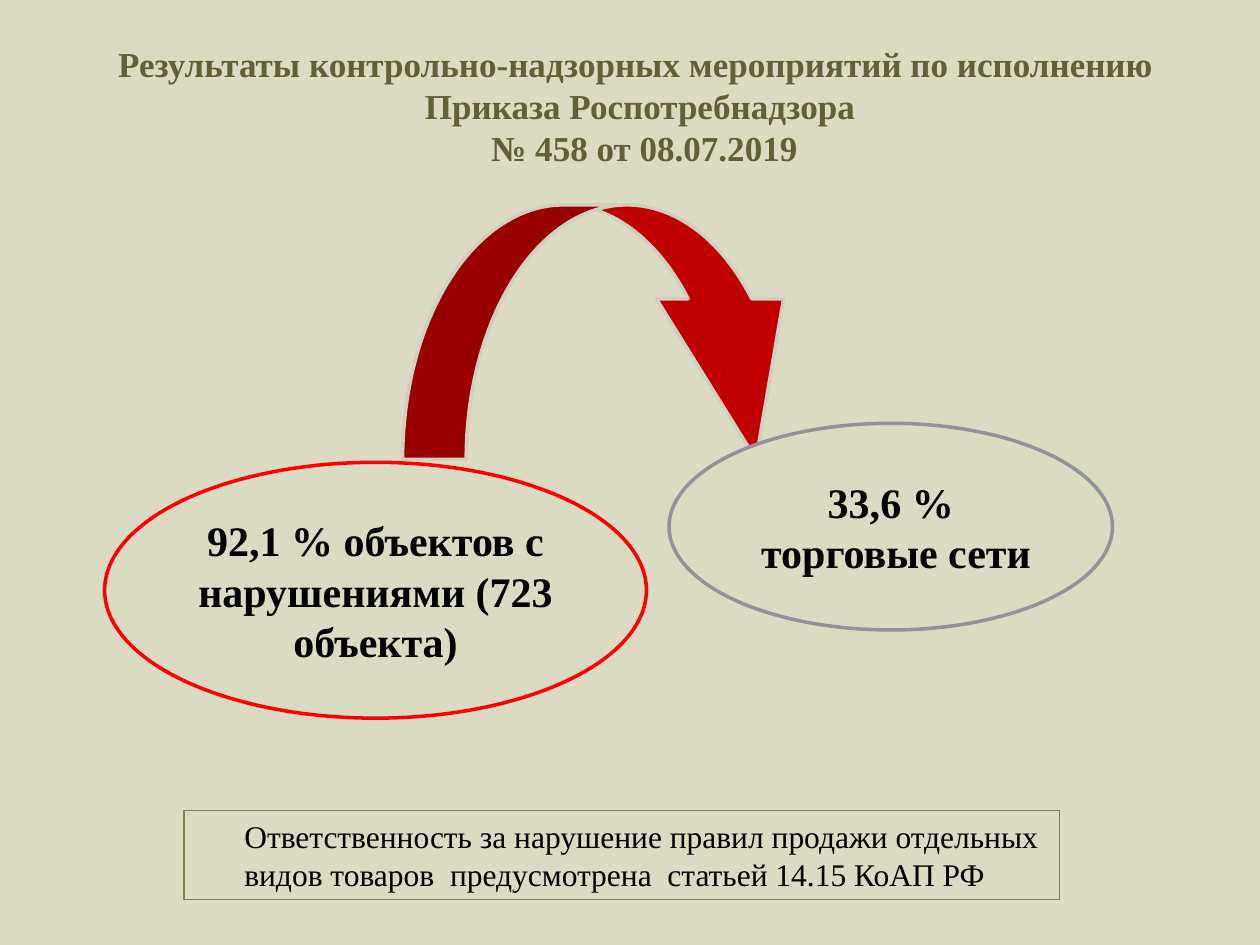
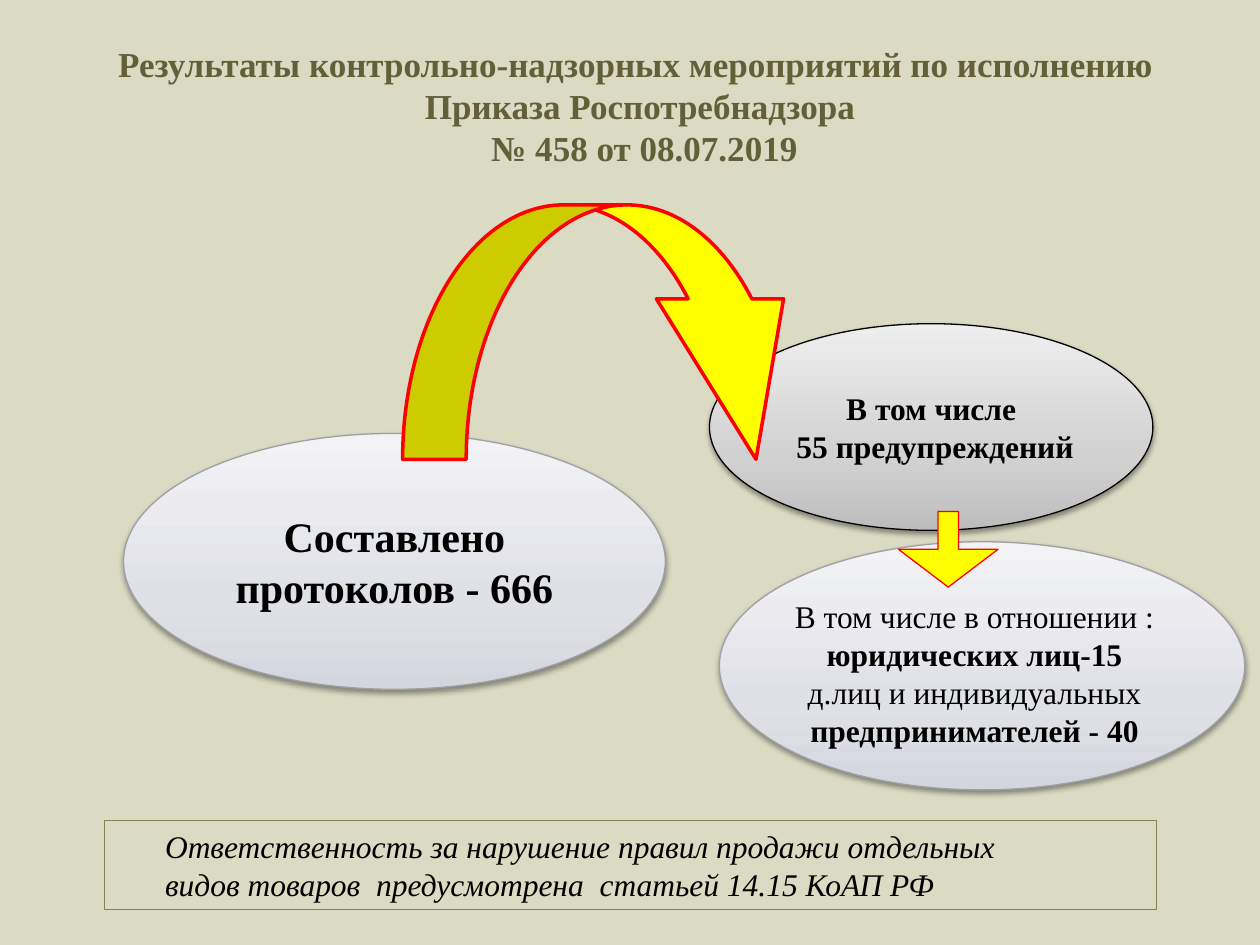
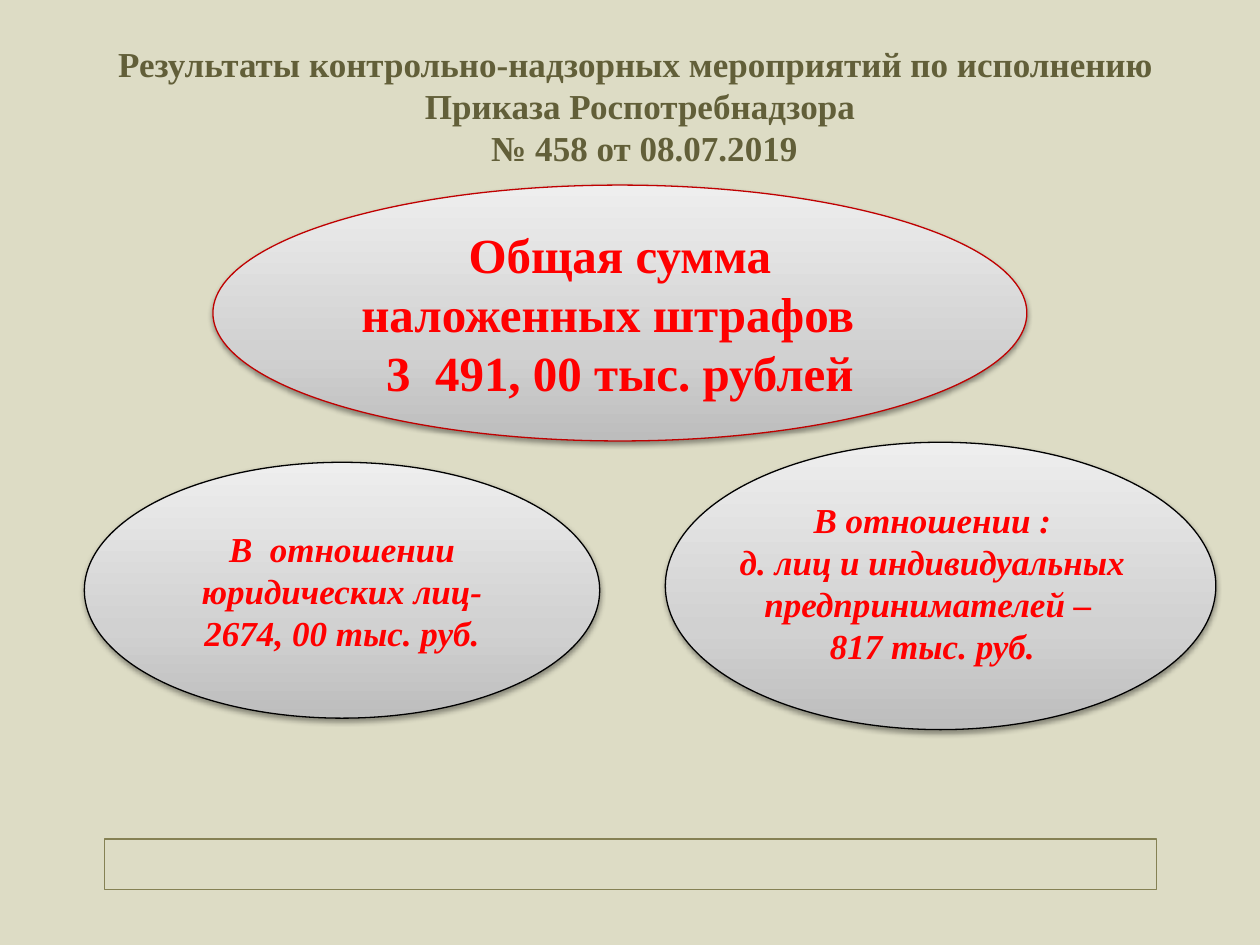
from copy import deepcopy

from pptx import Presentation
from pptx.dml.color import RGBColor
from pptx.enum.shapes import MSO_SHAPE
from pptx.enum.text import MSO_ANCHOR, MSO_AUTO_SIZE, PP_ALIGN
from pptx.oxml import parse_xml
from pptx.oxml.ns import nsdecls, qn
from pptx.util import Pt

# Colours and font
SAND = RGBColor(0xDB, 0xDA, 0xC2)
LIGHT_SAND = RGBColor(0xDD, 0xDC, 0xC5)
OLIVE = RGBColor(0x62, 0x5F, 0x39)
NOTE_LINE = RGBColor(0x85, 0x81, 0x54)
RED = RGBColor(0xFF, 0x00, 0x00)
DARK_RED = RGBColor(0xC0, 0x00, 0x00)
YELLOW = RGBColor(0xFF, 0xFF, 0x00)
BLACK = RGBColor(0x00, 0x00, 0x00)
PALE_LINE = RGBColor(0xD2, 0xCF, 0xBE)
GREY_LINE = RGBColor(0x92, 0x94, 0x9B)
SILVER_LINE = RGBColor(0x9E, 0xA0, 0xA8)
SILVER = [(0, RGBColor(0xD4, 0xD6, 0xDE)), (35, RGBColor(0xE0, 0xE1, 0xE7)),
          (100, RGBColor(0xF3, 0xF3, 0xF6))]
GREY = [(0, RGBColor(0xBD, 0xBD, 0xBD)), (35, RGBColor(0xD1, 0xD1, 0xD1)),
        (100, RGBColor(0xEE, 0xEE, 0xEE))]
FONT = "Times New Roman"

# Shared content and places: left, top, width, height in points
TITLE = ["Результаты контрольно-надзорных мероприятий по исполнению \n"
         "Приказа Роспотребнадзора\n № 458 от 08.07.2019"]
TITLE_BOX = (54, 20.9, 623.5, 79.9)
LIABILITY = ["Ответственность за нарушение правил продажи отдельных",
             "видов товаров  предусмотрена  статьей 14.15 КоАП РФ "]
ARC_BOX = (276.5, 70.6, 145.4, 238.3)

# Slide content: kind, box, format; listed from back to front
SLIDES = [
    (SAND, [
        ("ellipse", (59.8, 264.2, 309.6, 146.2),
         dict(fill=SAND, line=RED, weight=2, size=24, bold=True,
              text=["92,1 % объектов с нарушениями (723 объекта)"])),
        ("arc", ARC_BOX, dict(fill=DARK_RED, line=PALE_LINE, weight=2)),
        ("ellipse", (382.3, 241.9, 253.4, 118.1),
         dict(fill=SAND, line=GREY_LINE, weight=2, size=24, bold=True,
              text=["33,6 %", " торговые сети"])),
        ("note", (105.1, 463, 500.4, 51.1), dict(text=LIABILITY)),
    ]),
    (SAND, [
        ("ellipse", (70.6, 247.7, 309.6, 146.2),
         dict(fill=SILVER, line=SILVER_LINE, size=24, bold=True,
              text=["Составлено протоколов - 666"])),
        ("ellipse", (405.4, 185, 253.4, 118.1),
         dict(fill=GREY, line=BLACK, bold=True,
              text=["В том числе", " 55 предупреждений"])),
        ("note", (59.8, 468.7, 601.2, 51.1), dict(text=LIABILITY, italic=True)),
        ("ellipse", (411.1, 309.6, 300.2, 141.8), dict(fill=SILVER, line=SILVER_LINE)),
        ("label", (393.8, 337.7, 326.2, 94.3),
         dict(text=["В том числе в отношении :",
                    [("юридических лиц-15", True)],
                    [("д.лиц и индивидуальных ", False),
                     ("предпринимателей - 40", True)]])),
        ("down", (513.4, 292.3, 56.9, 43.2), dict(fill=YELLOW, line=RED)),
        ("arc", ARC_BOX, dict(fill=YELLOW, line=RED, weight=2)),
    ]),
    (LIGHT_SAND, [
        ("ellipse", (121.7, 105.8, 465.1, 146.2),
         dict(fill=GREY, line=DARK_RED, size=28, color=RED, bold=True,
              text=["Общая сумма наложенных штрафов   3  491, 00 тыс. рублей"])),
        ("ellipse", (48.2, 264.2, 294.5, 146.2),
         dict(fill=GREY, line=BLACK, size=20, color=RED, bold=True, italic=True,
              text=["В  отношении юридических лиц- 2674, 00 тыс. руб."])),
        ("note", (59.8, 479.5, 601.2, 28.8), {}),
        ("ellipse", (380.2, 252.7, 314.6, 164.2), dict(fill=GREY, line=BLACK)),
        ("label", (399.6, 281.5, 266.4, 104.4),
         dict(size=20, color=RED, bold=True, italic=True,
              text=["В отношении :",
                    "д. лиц и индивидуальных предпринимателей – ",
                    "817 тыс. руб."])),
    ]),
]

# Preset, rotation and adjustments of each drawn kind
PRESETS = {
    "ellipse": (MSO_SHAPE.OVAL, 0, ()),
    "note": (MSO_SHAPE.RECTANGLE, 0, ()),
    "arc": (MSO_SHAPE.CURVED_LEFT_ARROW, 270, (0.25, 0.5, 0.631)),
    "down": (MSO_SHAPE.DOWN_ARROW, 0, (0.206, 0.5)),
}


def write_text(shape, text, size=18, color=BLACK, bold=False, italic=False,
               align=PP_ALIGN.CENTER, anchor=MSO_ANCHOR.MIDDLE, indent=0):
    """Each paragraph is a string or a list of (text, bold) runs."""
    frame = shape.text_frame
    frame.word_wrap = True
    frame.auto_size = MSO_AUTO_SIZE.NONE
    frame.vertical_anchor = anchor
    for index, content in enumerate(text):
        paragraph = frame.add_paragraph() if index else frame.paragraphs[0]
        paragraph.alignment = align
        if indent:
            paragraph._p.get_or_add_pPr().set("indent", str(Pt(indent)))
        pieces = [(content, bold)] if isinstance(content, str) else content
        for piece, piece_bold in pieces:
            for row, line in enumerate(piece.split("\n")):
                if row:
                    paragraph.add_line_break()
                run = paragraph.add_run()
                run.text = line
                font = run.font
                font.name, font.size = FONT, Pt(size)
                font.bold, font.italic = piece_bold, italic
                font.color.rgb = color
        for line_break in paragraph._p.findall(qn("a:br")):
            line_break.append(deepcopy(run._r.rPr))


def fill_gradient(shape, stops):
    """Upward gradient with a soft shadow below the shape."""
    stop_xml = "".join(f'<a:gs pos="{position * 1000}"><a:srgbClr val="{color}"/></a:gs>'
                       for position, color in stops)
    properties = shape._element.spPr
    properties.find(qn("a:prstGeom")).addnext(parse_xml(
        f'<a:gradFill {nsdecls("a")} rotWithShape="1"><a:gsLst>{stop_xml}</a:gsLst>'
        '<a:lin ang="16200000" scaled="0"/></a:gradFill>'))
    properties.find(qn("a:effectLst")).append(parse_xml(
        f'<a:outerShdw {nsdecls("a")} blurRad="{Pt(3.1)}" dist="{Pt(1.6)}" dir="5400000" '
        'rotWithShape="0"><a:srgbClr val="000000"><a:alpha val="38000"/></a:srgbClr>'
        '</a:outerShdw>'))


def add_preset(slide, kind, box, fill=None, line=NOTE_LINE, weight=0.75):
    preset, rotation, adjustments = PRESETS[kind]
    shape = slide.shapes.add_shape(preset, *map(Pt, box))
    shape.rotation = rotation
    for index, value in enumerate(adjustments):
        shape.adjustments[index] = value
    shape.shadow.inherit = False
    shape.line.color.rgb = line
    shape.line.width = Pt(weight)
    if fill is None:
        shape.fill.background()
    elif isinstance(fill, list):
        fill_gradient(shape, fill)
    else:
        shape.fill.solid()
        shape.fill.fore_color.rgb = fill
    return shape


def add_item(slide, kind, box, options):
    look = {key: options[key] for key in ("fill", "line", "weight") if key in options}
    text_format = {key: value for key, value in options.items() if key not in look}
    if kind == "label":
        shape = slide.shapes.add_textbox(*map(Pt, box))
        text_format["anchor"] = MSO_ANCHOR.TOP
    else:
        shape = add_preset(slide, kind, box, **look)
    if kind == "note":
        text_format.update(align=PP_ALIGN.JUSTIFY, indent=27.4)
    if "text" in text_format:
        write_text(shape, **text_format)


def add_title(slide):
    title = slide.shapes.title
    title.left, title.top, title.width, title.height = map(Pt, TITLE_BOX)
    write_text(title, TITLE, size=20, color=OLIVE, bold=True, anchor=MSO_ANCHOR.TOP)


def main():
    presentation = Presentation()
    presentation.slide_width, presentation.slide_height = Pt(720), Pt(540)
    for background, items in SLIDES:
        slide = presentation.slides.add_slide(presentation.slide_layouts[5])
        slide.background.fill.solid()
        slide.background.fill.fore_color.rgb = background
        add_title(slide)
        for kind, box, options in items:
            add_item(slide, kind, box, options)
    presentation.save("out.pptx")


if __name__ == "__main__":
    main()
